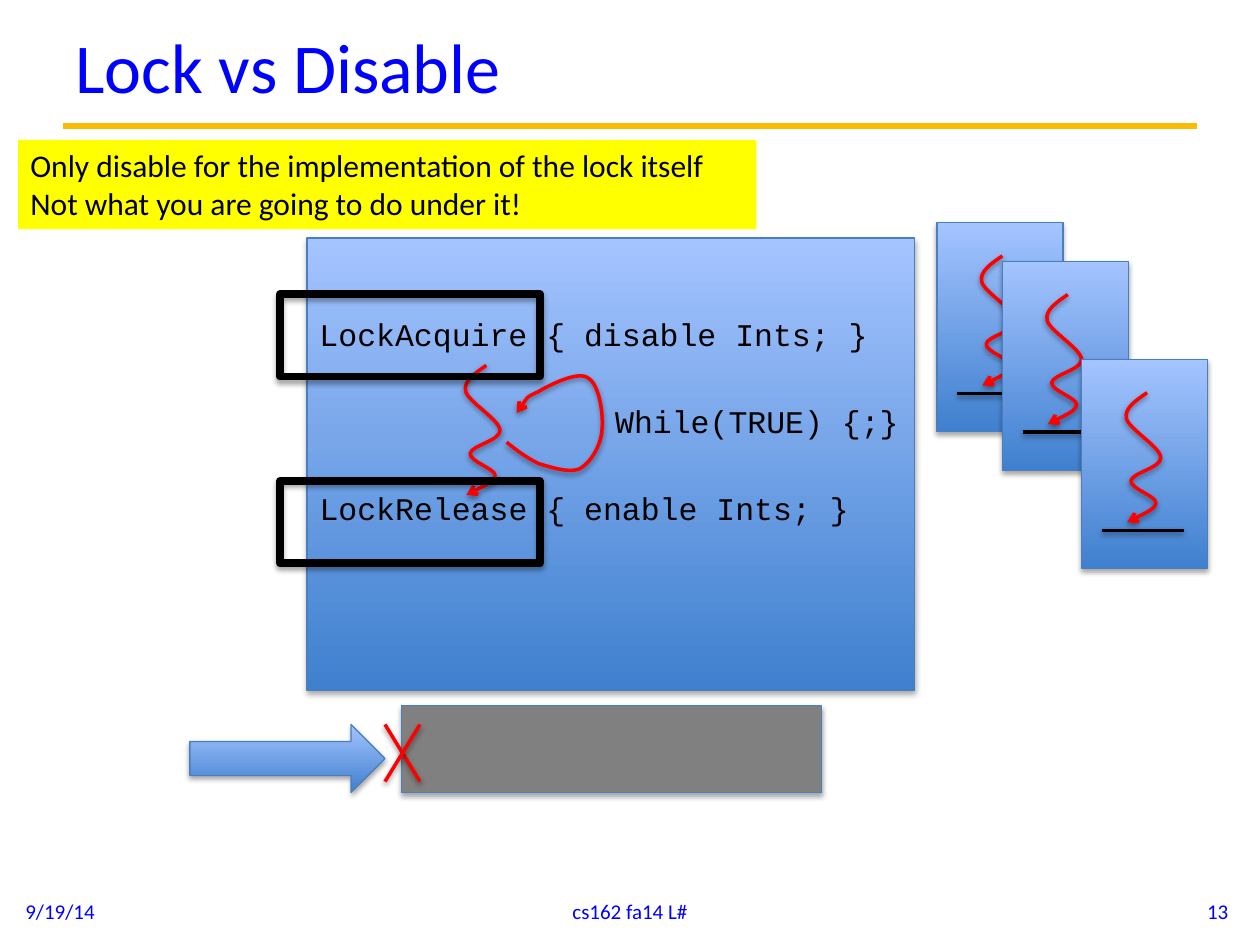
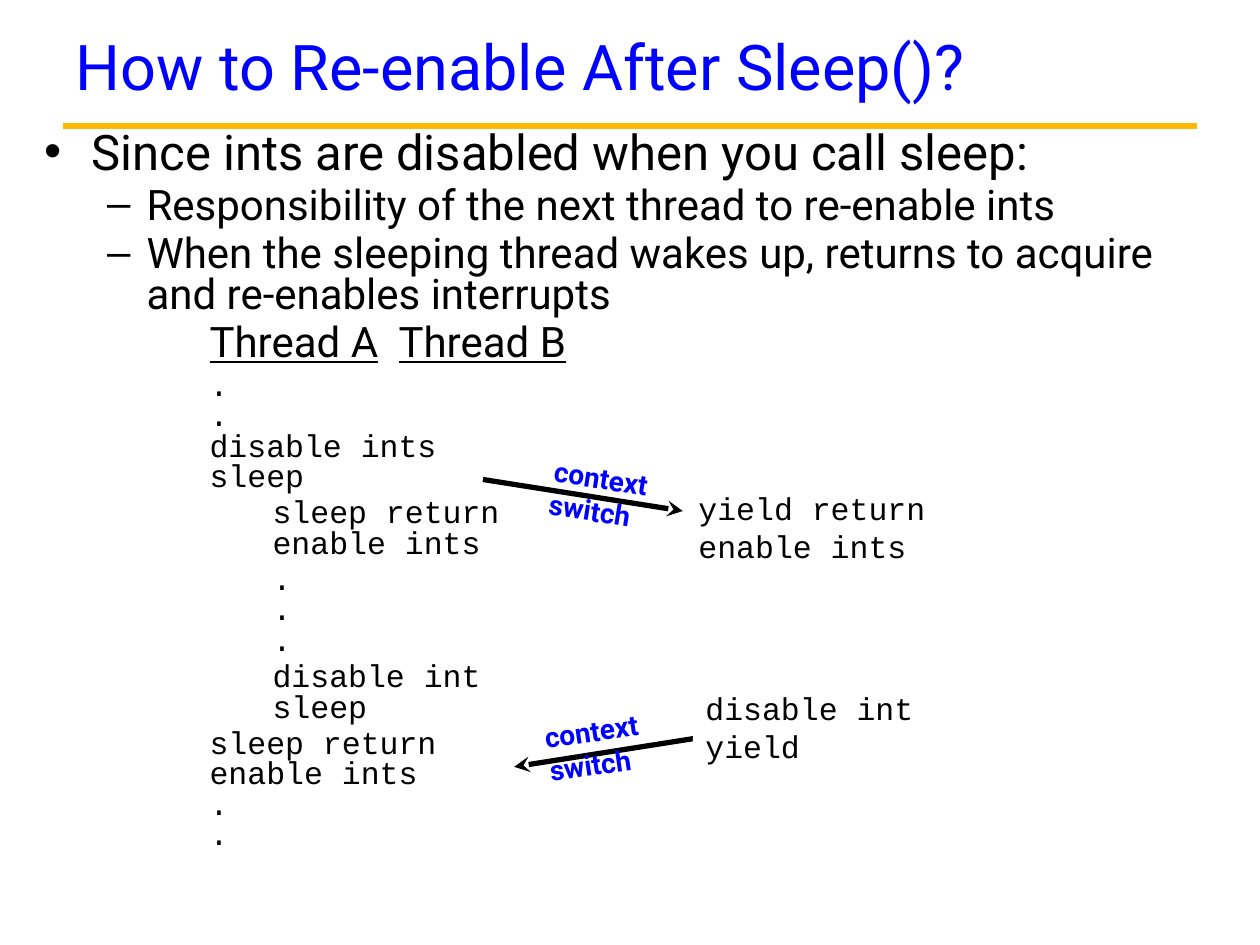
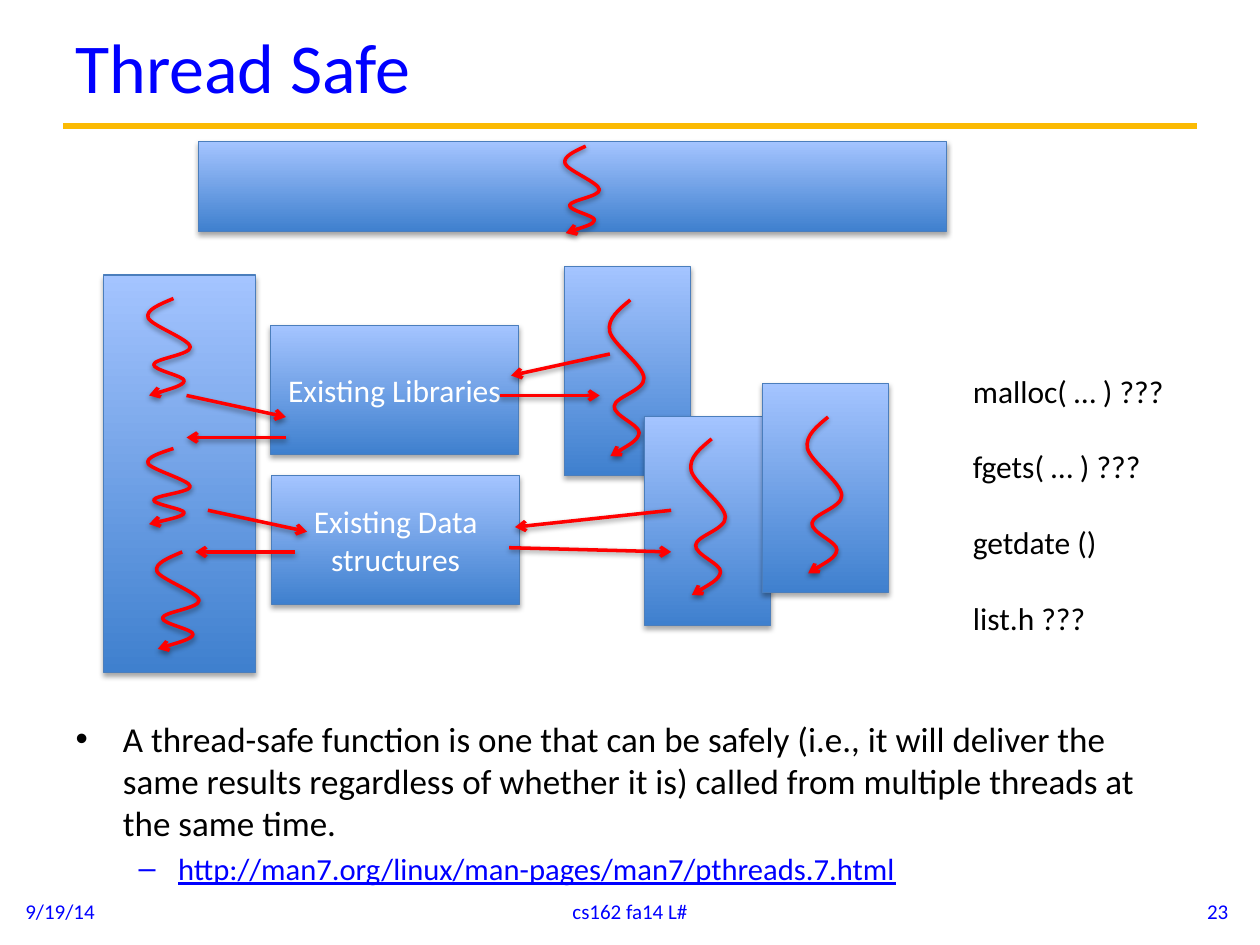
from lxml import etree
from pptx import Presentation
from pptx import util as u
from pptx.dml.color import RGBColor
from pptx.enum import shapes, text
from pptx.oxml import ns

Pt = u.Pt
BLUE, RED, BLACK, WHITE = "0000FF", "FF0000", "000000", "FFFFFF"
GOLD, YELLOW, GRAY, EDGE = "FBBA03", "FFFF00", "808080", "4B7EBC"
GRADIENT = ("3F80CE", "A4C4FF")
SANS, MONO, ROBOTO = "Calibri", "Courier New", "Roboto"
RECT, ARROW = shapes.MSO_SHAPE.RECTANGLE, shapes.MSO_SHAPE.RIGHT_ARROW
LEFT, CENTER, RIGHT = text.PP_ALIGN.LEFT, text.PP_ALIGN.CENTER, text.PP_ALIGN.RIGHT
TOP, MIDDLE = text.MSO_ANCHOR.TOP, text.MSO_ANCHOR.MIDDLE

TITLES = [("Lock vs Disable", 40, SANS),
          ("How to Re-enable After Sleep()?", 36, ROBOTO),
          ("Thread Safe", 40, SANS)]
FOOTER = [((7.4, 506, 168, 29), LEFT), ((246, 506, 228, 29), CENTER), ((541, 506, 168, 29), RIGHT)]

SQUIGGLE = [(.61, 0), (.29, .06), (-.05, .12), (.02, .2), (.09, .28), (.99, .42), (1, .5),
            (1.02, .58), (.17, .62), (.15, .68), (.12, .74), (.88, .8), (.86, .85),
            (.84, .9), (.04, 1), (.04, 1)]
SPIN_LOOP = [(289.5, 252.7), (296, 258), (301.7, 262), (308, 265), (315, 267), (325, 270.4),
             (331, 268), (337, 265), (343.4, 255), (344, 246), (345, 237.6), (342.7, 219.6),
             (336, 216), (330.5, 211.7), (314, 220), (307.4, 224), (300, 227), (295.3, 236),
             (295.3, 236)]

NOTE = ["Only disable for the implementation of the lock itself",
        "Not what you are going to do under it!"]
LOCK_CODE = [("LockAcquire { disable Ints; }", (175.5, 176.5, 360, 29)),
             ("LockRelease { enable Ints; }", (175.5, 276, 320, 29))]
SPIN_CODE = ("While(TRUE) {;}", (344.4, 226, 178, 29))
WAITING_CARDS = [(535.4, 127.2), (572.8, 149.3), (618.1, 205.4)]
LOCK_FRAMES = [(160, 168.2, 148.5, 47), (160, 275, 148.5, 47)]

SLEEP_POINTS = [("•", 27, -27, 28, "Since ints are disabled when you call sleep:"),
                ("–", 58.5, -22.5, 24, "Responsibility of the next thread to re-enable ints"),
                ("–", 58.5, -22.5, 24, "When the sleeping thread wakes up, returns to acquire "
                                       "and re-enables interrupts")]
THREADS = ["Thread A", "Thread B"]
TRACE = [(0, [".", ".", "disable ints", "sleep"]),
         (1, ["sleep return", "enable ints"]),
         (1, [".", ".", "."]),
         (1, ["disable int", "sleep"]),
         (0, ["sleep return", "enable ints", ".", "."])]
SWITCHES = [((276, 274), (390.2, 292), (308, 260, 72, 46), 9),
            ((408.2, 420.2), (293.8, 438.2), (305.3, 404, 72, 46), 351.4)]
OTHER_THREAD = [(["yield return", "enable ints"], (392, 275.8, 145.4, 51)),
                (["disable int", "yield"], (396, 390.2, 134.6, 51))]

PROCESSES = [((113.6, 80.8, 427.2, 51.6), [(322.5, 83.5, 20, 49.7)]),
             ((322.5, 152.3, 72, 119.5), [(348, 171.4, 20, 89.3)]),
             ((368.4, 238, 72, 119.5), [(394.5, 250.8, 20, 89.3)]),
             ((435.6, 219.3, 72, 119.5), [(461, 238.3, 20, 89.3)]),
             ((59, 157.2, 87, 227), [(84.2, 170.6, 24.5, 55.4), (84.2, 256.3, 24.5, 43.2),
                                     (89.2, 315.4, 24.5, 55.4)])]
SHARED = [("Existing Libraries", (154.4, 186, 142, 73.6)),
          ("Existing Data structures", (155.2, 271.8, 141.8, 73.6))]
CALLS = [((106.6, 226), (163.4, 238.3)), ((163.4, 250), (106.6, 250)),
         ((118.8, 291.6), (175.5, 303.8)), ((168.5, 315.4), (111.6, 315.4)),
         ((383.5, 291.6), (294.3, 301.2)), ((291, 313), (383.5, 315.4)),
         ((348.5, 202.3), (292, 214.6)), ((285.8, 226), (342.7, 226))]
SUSPECTS = ["malloc( … ) ???", "fgets( … ) ???", "getdate ()", "list.h ???"]
DEFINITION = [("•", 27, -27, 20, BLACK, False,
               "A thread-safe function is one that can be safely (i.e., it will deliver the same results "
               "regardless of whether it is) called from multiple threads at the same time."),
              ("–", 58.5, -22.5, 17.5, BLUE, True,
               "http://man7.org/linux/man-pages/man7/pthreads.7.html")]


def rgb(value):
    return RGBColor.from_string(value)


def child(parent, tag, **attrs):
    return etree.SubElement(parent, ns.qn(tag), {k: str(v) for k, v in attrs.items()})


def finish(sp, color, width, alpha=0, dist=1.8, head=None):
    if color:
        sp.line.color.rgb = rgb(color)
        sp.line.width = Pt(width)
        if head:
            child(sp.line._get_or_add_ln(), "a:tailEnd", type=head)
    else:
        sp.line.fill.background()
    effects = child(sp._element.spPr, "a:effectLst")
    if alpha:
        shadow = child(effects, "a:outerShdw", blurRad=Pt(3.1), dist=Pt(dist),
                       dir=5400000, rotWithShape=0)
        child(child(shadow, "a:srgbClr", val=BLACK), "a:alpha", val=alpha * 1000)


def box(s, at, fill=None, line=EDGE, width=.75, alpha=35, kind=RECT):
    sp = s.shapes.add_shape(kind, *map(Pt, at))
    if fill == GRADIENT:
        sp.fill.gradient()
        sp.fill.gradient_angle = 90
        for stop, color in zip(sp.fill.gradient_stops, GRADIENT):
            stop.color.rgb = rgb(color)
    elif fill:
        sp.fill.solid()
        sp.fill.fore_color.rgb = rgb(fill)
    else:
        sp.fill.background()
    finish(sp, line, width, alpha)
    return sp


def line(s, start, end, color=RED, width=2, alpha=38, head=None):
    sp = s.shapes.add_connector(shapes.MSO_CONNECTOR.STRAIGHT, *map(Pt, start + end))
    finish(sp, color, width, alpha, 1.6, head)


def curve(s, points):
    points = [(Pt(x), Pt(y)) for x, y in points]
    builder = s.shapes.build_freeform(*points[0])
    builder.add_line_segments(points[1:], close=False)
    sp = builder.convert_to_shape()
    outline = next(sp._element.iter(ns.qn("a:path")))
    segments = outline.findall(ns.qn("a:lnTo"))
    for i in range(0, len(segments), 3):
        bezier = child(outline, "a:cubicBezTo")
        for segment in segments[i:i + 3]:
            bezier.append(segment[0])
            outline.remove(segment)
    sp.fill.background()
    finish(sp, RED, 2, 38, 1.6, "arrow")


def squiggle(s, x, y, w, h):
    curve(s, [(x + w * px, y + h * py) for px, py in SQUIGGLE])


def frame(sp, anchor=TOP, wrap=True):
    tf = sp.text_frame
    tf.word_wrap = wrap
    tf.vertical_anchor = anchor
    return tf


def textbox(s, at, anchor=TOP, wrap=True):
    return frame(s.shapes.add_textbox(*map(Pt, at)), anchor, wrap)


def para(tf, align=LEFT, before=0, spacing=None, left=0, indent=0, bullet=None):
    first = len(tf.paragraphs) == 1 and not tf.paragraphs[0].runs
    p = tf.paragraphs[0] if first else tf.add_paragraph()
    pPr = p._p.get_or_add_pPr()
    if bullet:
        child(pPr, "a:buFont", typeface="Arial")
        child(pPr, "a:buChar", char=bullet)
    if left:
        pPr.set("marL", str(Pt(left)))
        pPr.set("indent", str(Pt(indent)))
    p.alignment = align
    if before and not first:
        p.space_before = Pt(before)
    if spacing:
        p.line_spacing = spacing
    return p


def run(p, words, size=18, font=SANS, color=BLACK, bold=False, underline=False):
    r = p.add_run()
    r.text = words
    f = r.font
    f.size, f.name, f.color.rgb = Pt(size), font, rgb(color)
    if bold:
        f.bold = True
    if underline:
        f.underline = True


def broken_lines(p, lines, **style):
    for i, words in enumerate(lines):
        if i:
            p.add_line_break()
        run(p, words, **style)


def new_slide(prs, title, number=None):
    s = prs.slides.add_slide(prs.slide_layouts[6])
    line(s, (36, 72), (684, 72), GOLD, 3.75, 0)
    words, size, font = title
    run(para(textbox(s, (36, 3, 648, 69), MIDDLE)), words, size, font, BLUE)
    if number:
        for (at, align), words in zip(FOOTER, ("9/19/14", "cs162 fa14 L#", number)):
            run(para(textbox(s, at, MIDDLE), align), words, 12, color=BLUE)
    return s


def lock_slide(prs):
    s = new_slide(prs, TITLES[0], "13")
    box(s, (175.5, 136, 347, 258.5), GRADIENT)
    for words, at in LOCK_CODE:
        run(para(textbox(s, at)), words, font=MONO)
    squiggle(s, 265.7, 208.8, 20, 74)
    curve(s, SPIN_LOOP)
    words, at = SPIN_CODE
    run(para(textbox(s, at, wrap=False)), words, font=MONO)
    box(s, (229.5, 403.2, 239.8, 49.7), GRAY)
    box(s, (108.5, 414, 111.5, 38.8), GRADIENT, kind=ARROW)
    line(s, (220, 414), (240, 446.6))
    line(s, (240, 414), (220, 446.6))
    for x, y in WAITING_CARDS:
        box(s, (x, y, 72, 119.5), GRADIENT)
        squiggle(s, x + 25.2, y + 19, 20, 74)
        line(s, (x + 11.7, y + 97.7), (x + 58.2, y + 97.7), BLACK)
    tf = frame(box(s, (10.3, 80, 422, 51), YELLOW, None, alpha=0))
    for words in NOTE:
        run(para(tf), words)
    for at in LOCK_FRAMES:
        box(s, at, None, BLACK, 4.5)


def sleep_slide(prs):
    s = new_slide(prs, TITLES[1])
    tf = textbox(s, (18.2, 72.2, 684, 479))
    for bullet, left, indent, size, words in SLEEP_POINTS:
        run(para(tf, LEFT, size * .2, .8, left, indent, bullet), words, size, ROBOTO)
    p = para(tf, before=4.8, spacing=.8, left=94.5)
    for i, words in enumerate(THREADS):
        if i:
            run(p, "\t", 24, ROBOTO)
        run(p, words, 24, ROBOTO, underline=True)
    for depth, lines in TRACE:
        p = para(tf, before=3.6, spacing=.8, left=94.5 + 36 * depth)
        broken_lines(p, lines, font=MONO)
    for start, end, at, angle in SWITCHES:
        line(s, start, end, BLACK, 3, 0, "stealth")
        sp = s.shapes.add_textbox(*map(Pt, at))
        sp.rotation = angle
        broken_lines(para(frame(sp, wrap=False)), ["context", "switch"],
                     size=16, font=ROBOTO, color=BLUE, bold=True)
    for lines, at in OTHER_THREAD:
        tf = frame(box(s, at, WHITE, None, alpha=0), wrap=False)
        for words in lines:
            run(para(tf), words, font=MONO)


def safe_slide(prs):
    s = new_slide(prs, TITLES[2], "23")
    tf = textbox(s, (36.2, 406.4, 648, 90))
    for bullet, left, indent, size, color, underline, words in DEFINITION:
        p = para(tf, LEFT, size * .2, None, left, indent, bullet)
        run(p, words, size, color=color, underline=underline)
    for at, threads in PROCESSES:
        box(s, at, GRADIENT)
        for thread in threads:
            squiggle(s, *thread)
    for words, at in SHARED:
        run(para(frame(box(s, at, GRADIENT), MIDDLE), CENTER), words, color=WHITE)
    for start, end in CALLS:
        line(s, start, end, head="arrow")
    tf = textbox(s, (548.9, 208.8, 124.6, 160), wrap=False)
    for words in SUSPECTS:
        run(para(tf, before=21.8), words)


def main():
    prs = Presentation()
    prs.slide_width, prs.slide_height = Pt(720), Pt(540)
    lock_slide(prs)
    sleep_slide(prs)
    safe_slide(prs)
    prs.save("out.pptx")


if __name__ == "__main__":
    main()
